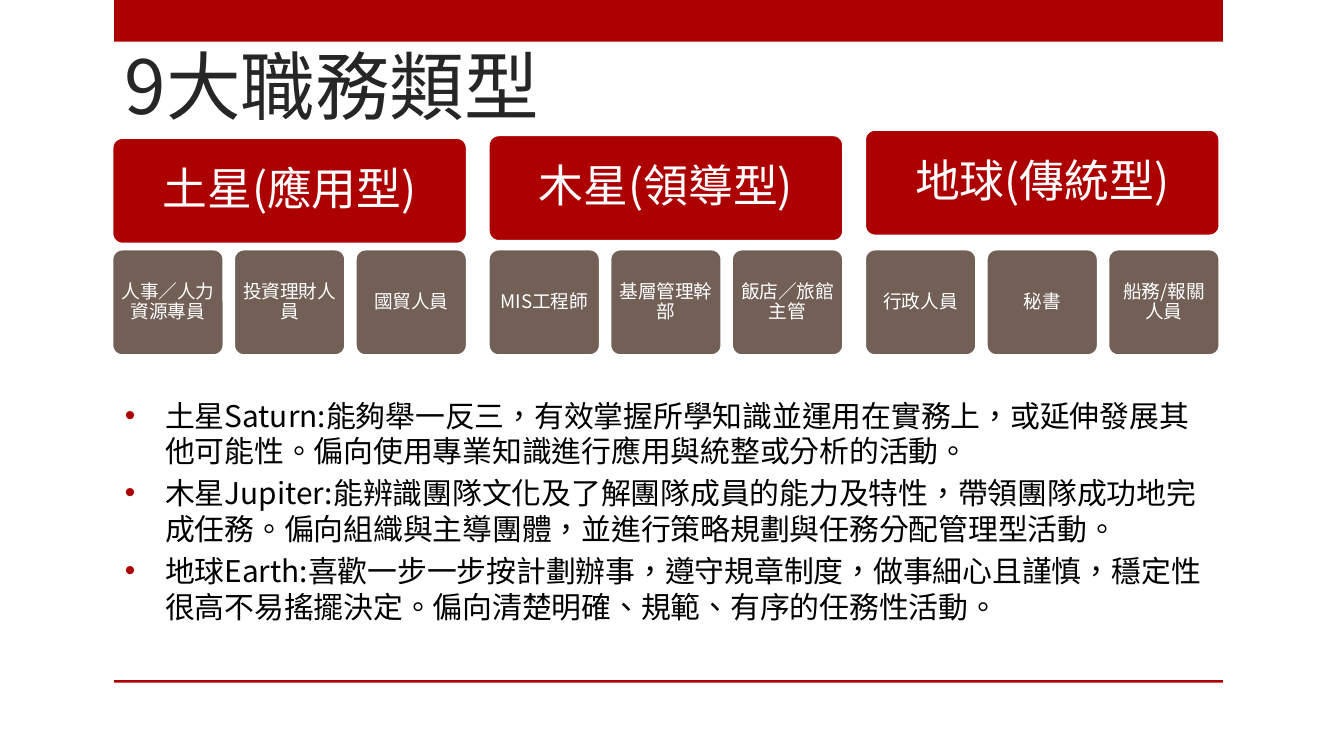
from pptx import Presentation
from pptx.dml.color import RGBColor
from pptx.enum.shapes import MSO_SHAPE
from pptx.enum.text import MSO_ANCHOR, PP_ALIGN
from pptx.oxml.ns import qn
from pptx.util import Inches, Pt
from lxml.etree import SubElement

FONT = "Noto Sans CJK SC"
RED, BROWN, WHITE = "AD0101", "726056", "FFFFFF"
LEFT = 0.83
PLANET_WIDTH, JOB_WIDTH = 2.65, 0.84
JOB_STEP = (PLANET_WIDTH - JOB_WIDTH) / 2

planets = [
    ("土星(應用型)", 1.02, ["人事／人力資源專員", "投資理財人員", "國貿人員"]),
    ("木星(領導型)", 1.00, ["MIS工程師", "基層管理幹部", "飯店／旅館主管"]),
    ("地球(傳統型)", 0.96, ["行政人員", "秘書", "船務/報關人員"]),
]
descriptions = [
    "土星Saturn:能夠舉一反三，有效掌握所學知識並運用在實務上，或延伸發展其他可能性。偏向使用專業知識進行應用與統整或分析的活動。",
    "木星Jupiter:能辨識團隊文化及了解團隊成員的能力及特性，帶領團隊成功地完成任務。偏向組織與主導團體，並進行策略規劃與任務分配管理型活動。",
    "地球Earth:喜歡一步一步按計劃辦事，遵守規章制度，做事細心且謹慎，穩定性很高不易搖擺決定。偏向清楚明確、規範、有序的任務性活動。",
]


def write(paragraph, text, size, color):
    """Fill a paragraph, with the font set for Latin and Chinese letters alike."""
    paragraph.text = text
    font = paragraph.font
    font.name, font.size = FONT, Pt(size)
    font.color.rgb = RGBColor.from_string(color)
    properties = paragraph._p.pPr.find(qn("a:defRPr"))
    SubElement(properties, qn("a:ea"), typeface=FONT)
    for run in paragraph.runs:
        run._r.get_or_add_rPr().set("lang", "zh-TW")


def add_block(kind, left, top, width, height, color):
    block = slide.shapes.add_shape(
        kind, Inches(left), Inches(top), Inches(width), Inches(height))
    block.shadow.inherit = False
    block.fill.solid()
    block.fill.fore_color.rgb = RGBColor.from_string(color)
    block.line.fill.background()
    return block


prs = Presentation()
prs.slide_width = Inches(10)
prs.slide_height = prs.slide_width * 9 // 16
slide = prs.slides.add_slide(prs.slide_layouts[6])

# Top band and bottom rule
for top, height in [(0, 0.31), (5.06, 0.02)]:
    add_block(MSO_SHAPE.RECTANGLE, 0.85, top, 8.25, height, RED)

title = slide.shapes.add_textbox(
    Inches(LEFT), Inches(0.14), Inches(7.42), Inches(0.87)).text_frame
title.word_wrap = True
title.vertical_anchor = MSO_ANCHOR.BOTTOM
write(title.paragraphs[0], "9大職務類型", 40, "262626")

# Each planet heads a row of three jobs
for column, (planet, planet_top, jobs) in enumerate(planets):
    left = LEFT + column * 2.8
    cards = [(planet, left, planet_top, PLANET_WIDTH, RED, 24, 0.1)]
    cards += [(job, left + i * JOB_STEP, 1.85, JOB_WIDTH, BROWN, 10, 0.04)
              for i, job in enumerate(jobs)]
    for text, card_left, top, width, color, size, margin in cards:
        card = add_block(MSO_SHAPE.ROUNDED_RECTANGLE, card_left, top, width, 0.8, color)
        card.adjustments[0] = 0.1
        card.line.color.rgb = RGBColor.from_string(WHITE)
        card.line.width = Pt(2)
        frame = card.text_frame
        frame.word_wrap = True
        frame.vertical_anchor = MSO_ANCHOR.MIDDLE
        frame.margin_left = frame.margin_right = Inches(margin)
        frame.margin_top = frame.margin_bottom = Inches(margin)
        label = frame.paragraphs[0]
        label.alignment = PP_ALIGN.CENTER
        label.line_spacing = 0.9
        write(label, text, size, WHITE)

body = slide.shapes.add_textbox(
    Inches(LEFT), Inches(2.58), Inches(8.25), Inches(2.44)).text_frame
body.word_wrap = True
body.vertical_anchor = MSO_ANCHOR.MIDDLE
for i, description in enumerate(descriptions):
    paragraph = body.add_paragraph() if i else body.paragraphs[0]
    paragraph.space_before = Pt(3.2)
    properties = paragraph._p.get_or_add_pPr()
    properties.set("marL", str(Inches(0.3)))
    properties.set("indent", str(Inches(-0.3)))
    bullet_color = SubElement(properties, qn("a:buClr"))
    SubElement(bullet_color, qn("a:srgbClr"), val=RED)
    SubElement(properties, qn("a:buFont"), typeface="Arial")
    SubElement(properties, qn("a:buChar"), char="•")
    write(paragraph, description, 16, "000000")

prs.save("out.pptx")
